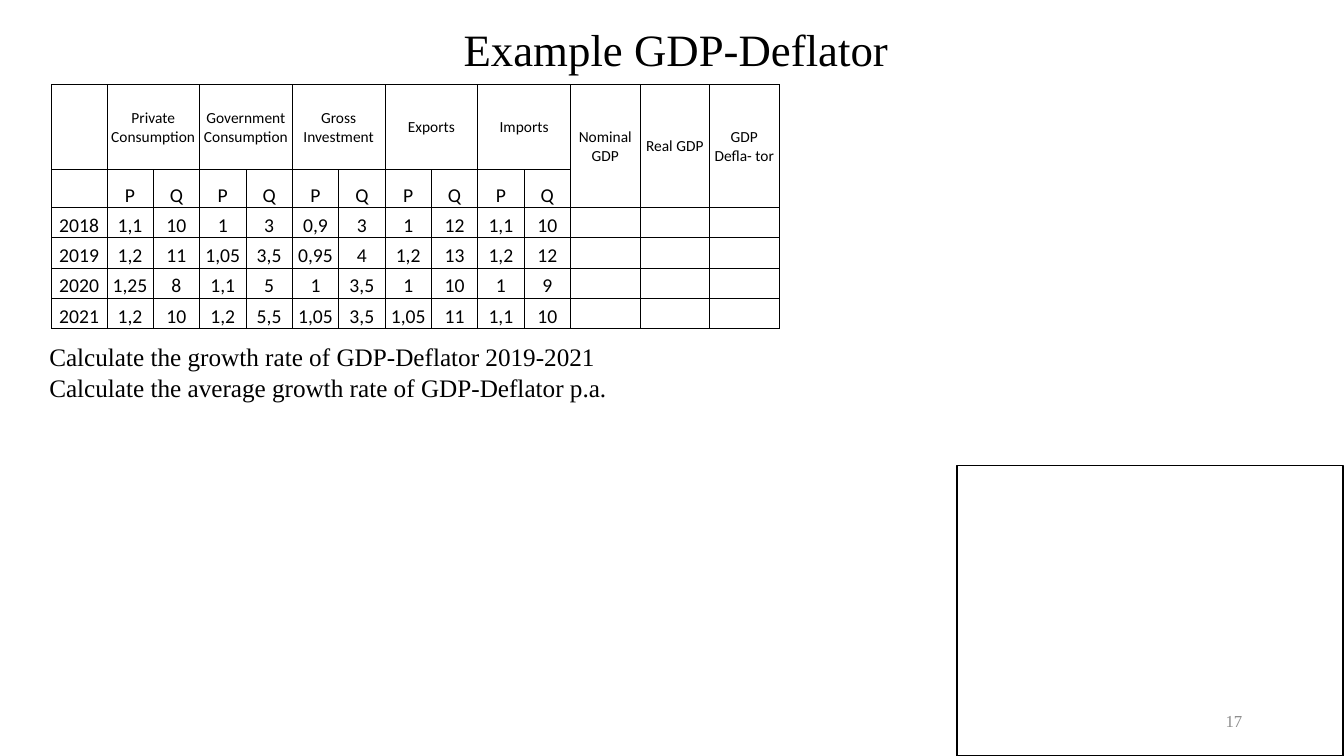
"""Builds the GDP deflator exercise slide with its price and quantity table."""
from lxml import etree
from pptx import Presentation
from pptx.dml.color import RGBColor
from pptx.enum import shapes, text
from pptx.oxml import ns
from pptx.util import Inches, Pt

BLACK = RGBColor(0x00, 0x00, 0x00)
GREY = RGBColor(0x8C, 0x8C, 0x8C)
SERIF, SANS = "Times New Roman", "Calibri"


def write(paragraph, wording, font, size, color=BLACK, align=text.PP_ALIGN.CENTER):
    paragraph.alignment = align
    run = paragraph.add_run()
    run.text = wording
    run.font.name = font
    run.font.size = Pt(size)
    run.font.color.rgb = color


def add_borders(cell):
    properties = cell._tc.get_or_add_tcPr()
    for side in ("a:lnL", "a:lnR", "a:lnT", "a:lnB"):
        line = etree.SubElement(properties, ns.qn(side), w=str(Pt(0.5)))
        solid = etree.SubElement(line, ns.qn("a:solidFill"))
        etree.SubElement(solid, ns.qn("a:srgbClr"), val=str(BLACK))


presentation = Presentation()
presentation.slide_width = Inches(13.33)
presentation.slide_height = Inches(7.5)
slide = presentation.slides.add_slide(presentation.slide_layouts[5])

heading = slide.shapes.title
heading.left, heading.top = Inches(1.86), Inches(0.13)
heading.width, heading.height = Inches(9.69), Inches(0.71)
heading.text_frame.auto_size = text.MSO_AUTO_SIZE.NONE
heading.text_frame.vertical_anchor = text.MSO_ANCHOR.MIDDLE
write(heading.text_frame.paragraphs[0], "Example GDP-Deflator", SERIF, 32)

page_number = slide.shapes.add_textbox(Inches(9.42), Inches(6.95), Inches(3), Inches(0.4)).text_frame
page_number.word_wrap = True
page_number.vertical_anchor = text.MSO_ANCHOR.MIDDLE
write(page_number.paragraphs[0], "17", SERIF, 12, GREY, text.PP_ALIGN.RIGHT)

tasks = slide.shapes.add_textbox(Inches(0.39), Inches(3.34), Inches(5.79), Inches(0.71)).text_frame
tasks.word_wrap = False
tasks.auto_size = text.MSO_AUTO_SIZE.SHAPE_TO_FIT_TEXT
write(tasks.paragraphs[0], "Calculate the growth rate of GDP-Deflator 2019-2021",
      SERIF, 18, align=text.PP_ALIGN.LEFT)
write(tasks.add_paragraph(), "Calculate the average growth rate of GDP-Deflator p.a.",
      SERIF, 18, align=text.PP_ALIGN.LEFT)

components = ["Private Consumption", "Government Consumption", "Gross Investment", "Exports", "Imports"]
results = ["Nominal GDP", "Real GDP", "GDP Defla- tor"]
years = [
    ["2018", "1,1", "10", "1", "3", "0,9", "3", "1", "12", "1,1", "10"],
    ["2019", "1,2", "11", "1,05", "3,5", "0,95", "4", "1,2", "13", "1,2", "12"],
    ["2020", "1,25", "8", "1,1", "5", "1", "3,5", "1", "10", "1", "9"],
    ["2021", "1,2", "10", "1,2", "5,5", "1,05", "3,5", "1,05", "11", "1,1", "10"],
]
header = [""]
for component in components:
    header += [component, ""]
blank_results = [""] * len(results)
rows = [header + results, [""] + ["P", "Q"] * len(components) + blank_results]
rows += [year + blank_results for year in years]
widths = [0.55] + [0.46] * 10 + [0.69] * 3
heights = [0.84, 0.37] + [0.3] * 4

gdp = slide.shapes.add_table(len(rows), len(widths), Inches(0.51), Inches(0.84),
                             Inches(sum(widths)), Inches(sum(heights))).table
gdp.first_row = gdp.horz_banding = False
for column, width in zip(gdp.columns, widths):
    column.width = Inches(width)
for row, height in zip(gdp.rows, heights):
    row.height = Inches(height)

for r, values in enumerate(rows):
    for c, value in enumerate(values):
        cell = gdp.cell(r, c)
        cell.margin_left = cell.margin_right = cell.margin_top = Inches(0.01)
        cell.margin_bottom = 0
        cell.vertical_anchor = text.MSO_ANCHOR.BOTTOM if r else text.MSO_ANCHOR.MIDDLE
        add_borders(cell)
        cell.fill.background()
        paragraph = cell.text_frame.paragraphs[0]
        if value:
            write(paragraph, value, SANS, 14 if r else 11)
        else:
            paragraph.font.size = Pt(14)

for c in range(1, 11, 2):
    gdp.cell(0, c).merge(gdp.cell(0, c + 1))
for c in range(11, 14):
    gdp.cell(0, c).merge(gdp.cell(1, c))

answer_area = slide.shapes.add_shape(shapes.MSO_SHAPE.RECTANGLE, Inches(9.49), Inches(4.62),
                                     Inches(3.83), Inches(2.88))
answer_area.shadow.inherit = False
answer_area.fill.background()
answer_area.line.color.rgb = BLACK
answer_area.line.width = Pt(1)

presentation.save("out.pptx")
